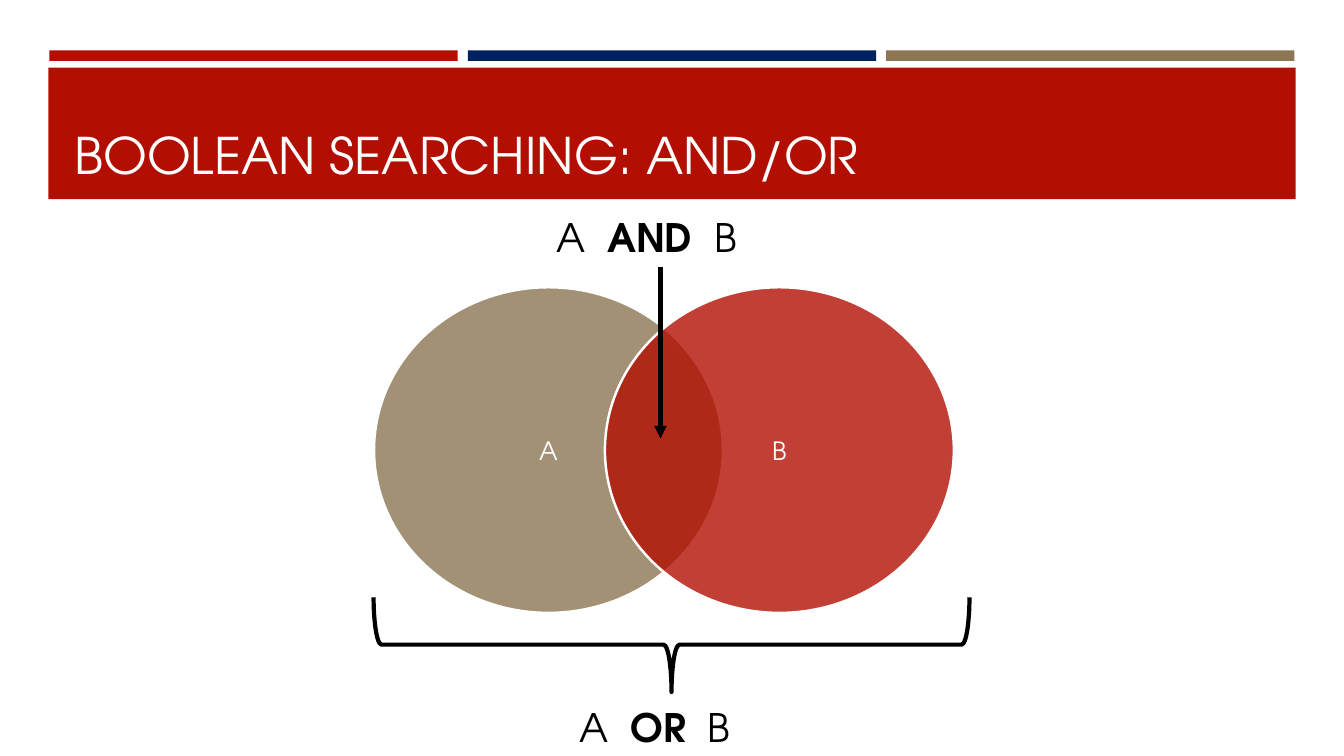
from dataclasses import dataclass

from lxml.etree import SubElement
from pptx import Presentation
from pptx.dml.color import RGBColor
from pptx.enum.shapes import MSO_CONNECTOR, MSO_SHAPE
from pptx.enum.text import MSO_ANCHOR, MSO_AUTO_SIZE, PP_ALIGN
from pptx.oxml.ns import qn
from pptx.util import Inches, Pt


@dataclass(frozen=True)
class Theme:
    font: str = "TeX Gyre Adventor"
    red: str = "B20F02"
    navy: str = "002060"
    tan: str = "8D7654"
    white: str = "FFFFFF"
    black: str = "000000"
    title: int = 36
    label: int = 28
    name: int = 18
    rim: float = 1.75
    stroke: int = 3


def write(frame, text, font, size, color, align=PP_ALIGN.LEFT,
          anchor=MSO_ANCHOR.TOP, wrap=True):
    frame.word_wrap = wrap
    frame.auto_size = MSO_AUTO_SIZE.NONE if wrap else MSO_AUTO_SIZE.SHAPE_TO_FIT_TEXT
    frame.vertical_anchor = anchor
    para = frame.paragraphs[0]
    para.alignment = align
    for index, part in enumerate(text.split("*")):
        run = para.add_run()
        run.text = part
        run.font.name = font
        run.font.size = Pt(size)
        run.font.bold = index % 2 == 1
        run.font.color.rgb = RGBColor.from_string(color)


class Board:
    """Draws styled elements on a slide, with lengths in percent of its size."""

    def __init__(self, deck, theme):
        self.theme = theme
        self.wide, self.high = deck.slide_width, deck.slide_height
        self.shapes = deck.slides.add_slide(deck.slide_layouts[6]).shapes

    def place(self, *shares):
        sides = (self.wide, self.high) * 2
        return [round(side * share / 100) for side, share in zip(sides, shares)]

    def shape(self, kind, area, fill=None, line=None, width=0, alpha=None):
        shape = self.shapes.add_shape(kind, *self.place(*area))
        shape.shadow.inherit = False
        if fill:
            shape.fill.solid()
            shape.fill.fore_color.rgb = RGBColor.from_string(fill)
        else:
            shape.fill.background()
        if line:
            shape.line.color.rgb = RGBColor.from_string(line)
            shape.line.width = Pt(width)
        else:
            shape.line.fill.background()
        if alpha:
            color = shape.fill._xPr.find(qn("a:solidFill"))[0]
            SubElement(color, qn("a:alpha"), val=str(alpha * 1000))
        return shape

    def bar(self, area, fill):
        self.shape(MSO_SHAPE.RECTANGLE, area, fill)

    def circle(self, area, fill, name):
        theme = self.theme
        shape = self.shape(MSO_SHAPE.OVAL, area, fill, theme.white, theme.rim, 80)
        write(shape.text_frame, name, theme.font, theme.name, theme.white,
              align=PP_ALIGN.CENTER, anchor=MSO_ANCHOR.MIDDLE)

    def brace(self, area):
        theme = self.theme
        shape = self.shape(MSO_SHAPE.LEFT_BRACE, area, line=theme.black, width=theme.stroke)
        shape.rotation = 270

    def text(self, area, text, size, color, **style):
        box = self.shapes.add_textbox(*self.place(*area))
        write(box.text_frame, text, self.theme.font, size, color, **style)

    def arrow(self, ends):
        line = self.shapes.add_connector(MSO_CONNECTOR.STRAIGHT, *self.place(*ends))
        line.line.color.rgb = RGBColor.from_string(self.theme.black)
        line.line.width = Pt(self.theme.stroke)
        SubElement(line.line._get_or_add_ln(), qn("a:tailEnd"), type="triangle")
        SubElement(line._element.spPr, qn("a:effectLst"))


def main():
    deck = Presentation()
    deck.slide_width, deck.slide_height = Inches(13.33), Inches(7.5)
    theme = Theme()
    board = Board(deck, theme)

    for step, color in enumerate((theme.red, theme.navy, theme.tan)):
        board.bar((3.68 + 31.13 * step, 6.67, 30.38, 1.4), color)
    board.bar((3.6, 8.93, 92.8, 17.4), theme.red)
    board.text((4.8, 10.27, 90.47, 14.8), "BOOLEAN SEARCHING: AND/OR",
               theme.title, theme.white, anchor=MSO_ANCHOR.BOTTOM)

    for step, (name, color) in enumerate((("A", theme.tan), ("B", theme.red))):
        board.circle((27.83 + 17.18 * step, 38, 25.96, 43.07), color, name)

    labels = (("A  *AND*  B", (40.66, 27.6, 15.23, 7.6)),
              ("A  *OR*  B", (42.39, 92.4, 12.83, 7.6)))
    for text, area in labels:
        board.text(area, text, theme.label, theme.black, wrap=False)
    board.brace((46.44, 45.87, 7.05, 78.8))
    board.arrow((49.14, 35.33, 49.14, 58))
    deck.save("out.pptx")


if __name__ == "__main__":
    main()
